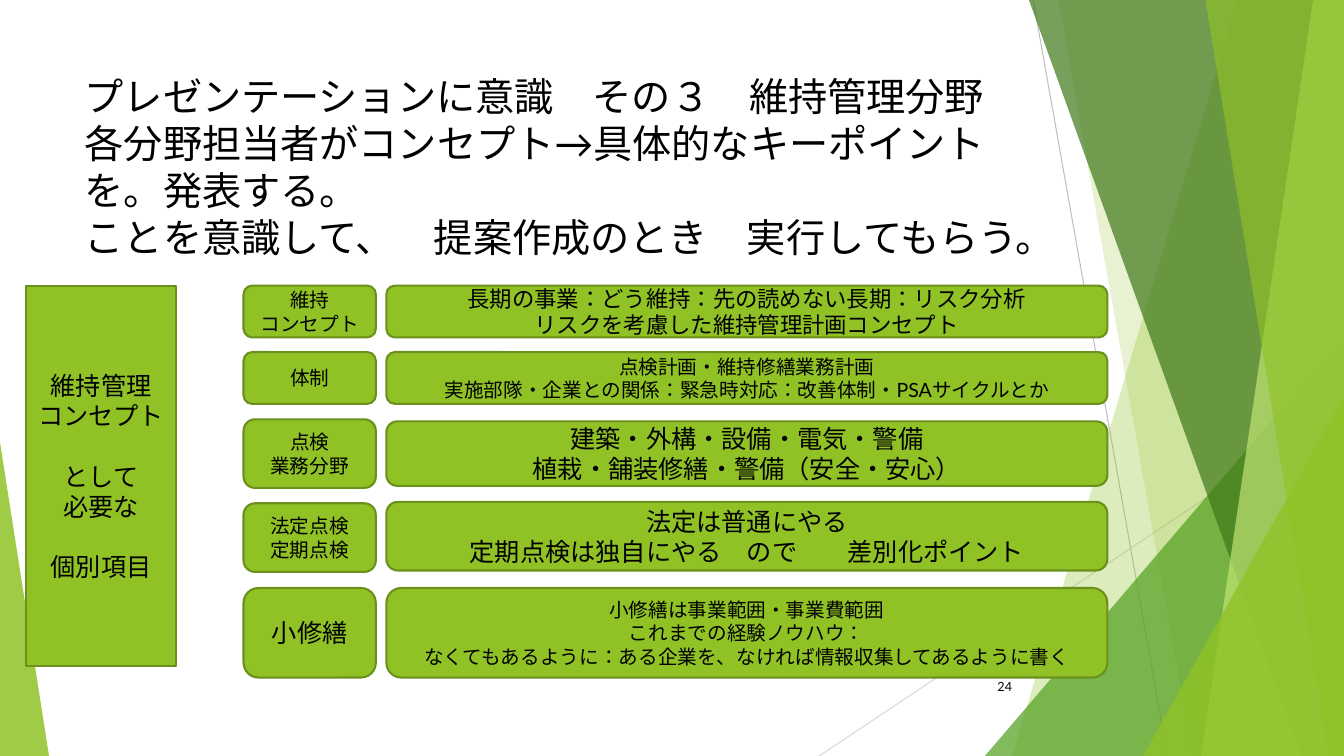
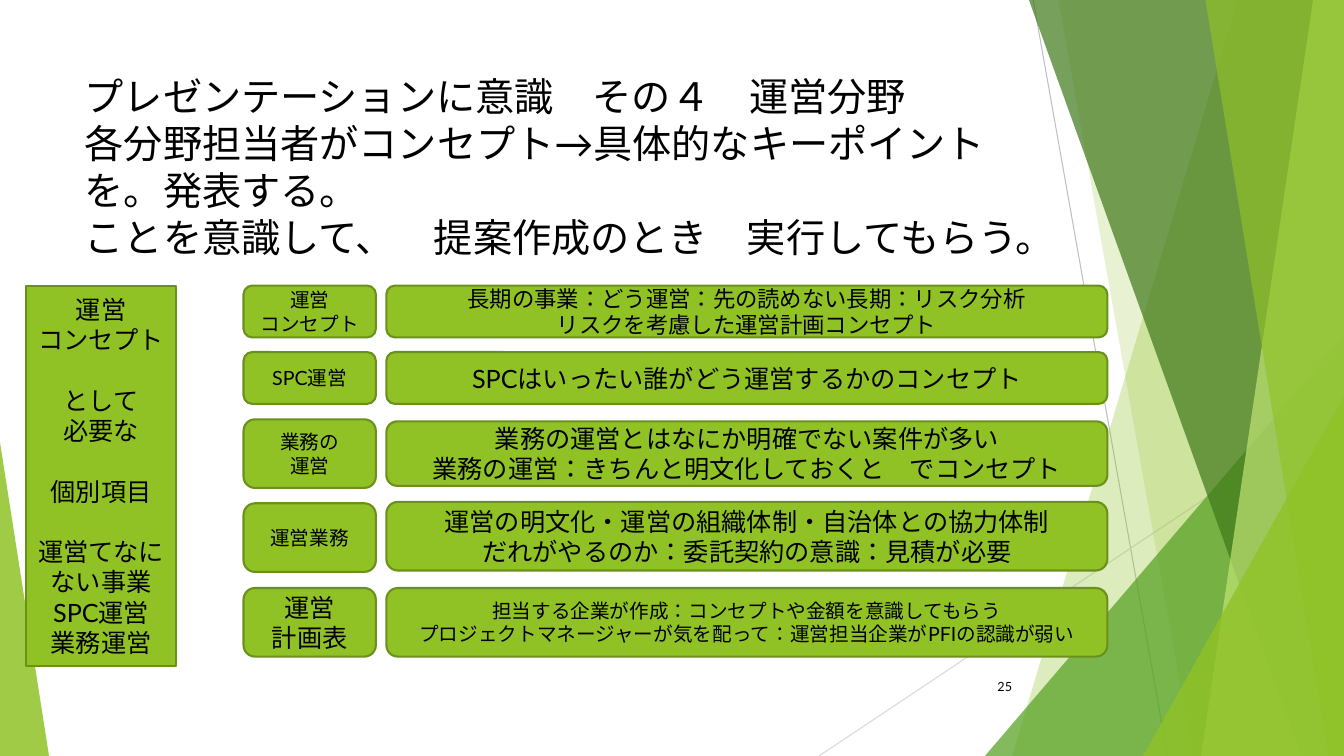
from lxml import etree
from pptx import Presentation
from pptx import util as u
from pptx.dml.color import RGBColor
from pptx.enum import lang, shapes, text
from pptx.oxml import ns

Pt = u.Pt
SHAPE = shapes.MSO_SHAPE
ALIGN = text.PP_ALIGN
COLORS = {
    "leaf": "90C226", "moss": "54A021", "forest": "3F7819", "lime": "C0E474",
    "edge": "6B901C", "ink": "000000", "ray": "BFBFBF", "pale_ray": "D9D9D9",
}
FONT = "Lato"
FRAME_FORMAT = {"word_wrap": True, "auto_size": text.MSO_AUTO_SIZE.NONE}
FONT_FORMAT = {"name": FONT, "language_id": lang.MSO_LANGUAGE_ID.JAPANESE}
LINE_HEIGHT = 1.2

WIDTH, HEIGHT = 960, 540
RAYS = [("ray", (738, 0, 834, 540)), ("pale_ray", (960, 290, 585, 540))]
FACETS = [
    ("band", (884, 723), "leaf", 30),
    ("band", (756, 852), "leaf", 20),
    ("corner", (703.5, 240, 256.5, 300, 1), "moss", 72),
    ("band", (735, 929.5), "forest", 70),
    ("band", (938, 858), "lime", 70),
    ("band", (861, 949), "leaf", 65),
    ("corner", (816.5, 283, 143.5, 257, 1), "leaf", 80),
    ("corner", (0, 316, 35, 224, 0), "leaf", 85),
]
TITLE_END = (
    "各分野担当者がコンセプト→具体的なキーポイント\nを。発表する。\n"
    "ことを意識して、\u3000提案作成のとき\u3000実行してもらう。"
).replace("\u3000", "　")
LABEL_ROWS = [(204, 37), (251.5, 37), (299.5, 49), (359.5, 49)]
POINT_ROWS = [(204, 37), (251.5, 37), (301, 46), (358.5, 49)]
LAST_TOP = 420

FIELDS = [
    {
        "page": "24",
        "title": "プレゼンテーションに意識　その３　維持管理分野",
        "concept": ["維持管理\nコンセプト", "として\n必要な", "個別項目"],
        "last_height": 64,
        "labels": [
            ("維持\nコンセプト", 14), ("体制", 14), ("点検\n業務分野", 14),
            ("法定点検\n定期点検", 14), ("小修繕", 18),
        ],
        "points": [
            ("長期の事業：どう維持：先の読めない長期：リスク分析\n"
             "リスクを考慮した維持管理計画コンセプト", 16),
            ("点検計画・維持修繕業務計画\n"
             "実施部隊・企業との関係：緊急時対応：改善体制・PSAサイクルとか", 14),
            ("建築・外構・設備・電気・警備\n植栽・舗装修繕・警備（安全・安心）", 18),
            ("法定は普通にやる\n定期点検は独自にやる　ので　　差別化ポイント", 18),
            ("小修繕は事業範囲・事業費範囲\nこれまでの経験ノウハウ：\n"
             "なくてもあるように：ある企業を、なければ情報収集してあるように書く", 14),
        ],
    },
    {
        "page": "25",
        "title": "プレゼンテーションに意識　その４　運営分野",
        "concept": ["運営\nコンセプト", "として\n必要な", "個別項目",
                    "運営てなに\nない事業\nSPC運営\n業務運営"],
        "last_height": 49,
        "labels": [
            ("運営\nコンセプト", 14), ("SPC運営", 14), ("業務の\n運営", 14),
            ("運営業務", 14), ("運営\n計画表", 18),
        ],
        "points": [
            ("長期の事業：どう運営：先の読めない長期：リスク分析\n"
             "リスクを考慮した運営計画コンセプト", 16),
            ("SPCはいったい誰がどう運営するかのコンセプト", 18),
            ("業務の運営とはなにか明確でない案件が多い\n"
             "業務の運営：きちんと明文化しておくと　でコンセプト", 18),
            ("運営の明文化・運営の組織体制・自治体との協力体制\n"
             "だれがやるのか：委託契約の意識：見積が必要", 18),
            ("担当する企業が作成：コンセプトや金額を意識してもらう\n"
             "プロジェクトマネージャーが気を配って：運営担当企業がPFIの認識が弱い", 14),
        ],
    },
]


def paint(shape, color, opacity=100):
    shape.shadow.inherit = False
    shape.fill.solid()
    shape.fill.fore_color.rgb = RGBColor.from_string(COLORS[color])
    if opacity < 100:
        tint = shape._element.spPr.find(".//" + ns.qn("a:srgbClr"))
        etree.SubElement(tint, ns.qn("a:alpha"), val=str(opacity * 1000))
        shape.line.fill.background()
    else:
        shape.line.color.rgb = RGBColor.from_string(COLORS["edge"])
        shape.line.width = Pt(1.5)


def write(shape, groups, size, align, anchor):
    frame = shape.text_frame
    for key, value in FRAME_FORMAT.items():
        setattr(frame, key, value)
    frame.vertical_anchor = anchor
    frame.text = "\n".join(groups)
    starts = set()
    count = 0
    for group in groups[:-1]:
        count += len(group.split("\n"))
        starts.add(count)
    for index, paragraph in enumerate(frame.paragraphs):
        paragraph.alignment = align
        if index in starts:
            paragraph.space_before = Pt(size * LINE_HEIGHT)
        run = paragraph.runs[0]
        for key, value in FONT_FORMAT.items():
            setattr(run.font, key, value)
        run.font.size = Pt(size)
        run.font.color.rgb = RGBColor.from_string(COLORS["ink"])
        etree.SubElement(run._r.get_or_add_rPr(), ns.qn("a:ea"), typeface=FONT)


deck = Presentation()
deck.slide_width, deck.slide_height = Pt(WIDTH), Pt(HEIGHT)

for field in FIELDS:
    slide = deck.slides.add_slide(deck.slide_layouts[6])

    for color, ends in RAYS:
        ray = slide.shapes.add_connector(shapes.MSO_CONNECTOR.STRAIGHT, *map(Pt, ends))
        ray.line.color.rgb = RGBColor.from_string(COLORS[color])
        ray.line.width = Pt(0.75)
        etree.SubElement(ray._element.spPr, ns.qn("a:effectLst"))

    for kind, place, color, opacity in FACETS:
        if kind == "band":
            top_x, bottom_x = place
            outline = slide.shapes.build_freeform(Pt(top_x), 0)
            outline.add_line_segments(
                [(Pt(WIDTH), 0), (Pt(WIDTH), Pt(HEIGHT)), (Pt(bottom_x), Pt(HEIGHT))])
            facet = outline.convert_to_shape()
        else:
            *box, tip = place
            facet = slide.shapes.add_shape(SHAPE.ISOSCELES_TRIANGLE, *map(Pt, box))
            facet.adjustments[0] = tip
        paint(facet, color, opacity)

    title = slide.shapes.add_textbox(Pt(53.5), Pt(48), Pt(703.5), Pt(155.5))
    write(title, [field["title"] + "\n" + TITLE_END], 28, ALIGN.LEFT, text.MSO_ANCHOR.TOP)

    page = slide.shapes.add_textbox(Pt(676), Pt(476), Pt(54), Pt(29))
    write(page, [field["page"]], 9, ALIGN.RIGHT, text.MSO_ANCHOR.MIDDLE)

    concept = slide.shapes.add_shape(SHAPE.RECTANGLE, Pt(18.5), Pt(204), Pt(107.5), Pt(272))
    paint(concept, "leaf")
    write(concept, field["concept"], 18, ALIGN.CENTER, text.MSO_ANCHOR.MIDDLE)

    last_row = (LAST_TOP, field["last_height"])
    for column, left, width, rows in [("labels", 174, 94.5, LABEL_ROWS),
                                      ("points", 276, 515, POINT_ROWS)]:
        for (words, size), (top, height) in zip(field[column], rows + [last_row]):
            card = slide.shapes.add_shape(
                SHAPE.ROUNDED_RECTANGLE, Pt(left), Pt(top), Pt(width), Pt(height))
            paint(card, "leaf")
            write(card, [words], size, ALIGN.CENTER, text.MSO_ANCHOR.MIDDLE)

deck.save("out.pptx")
